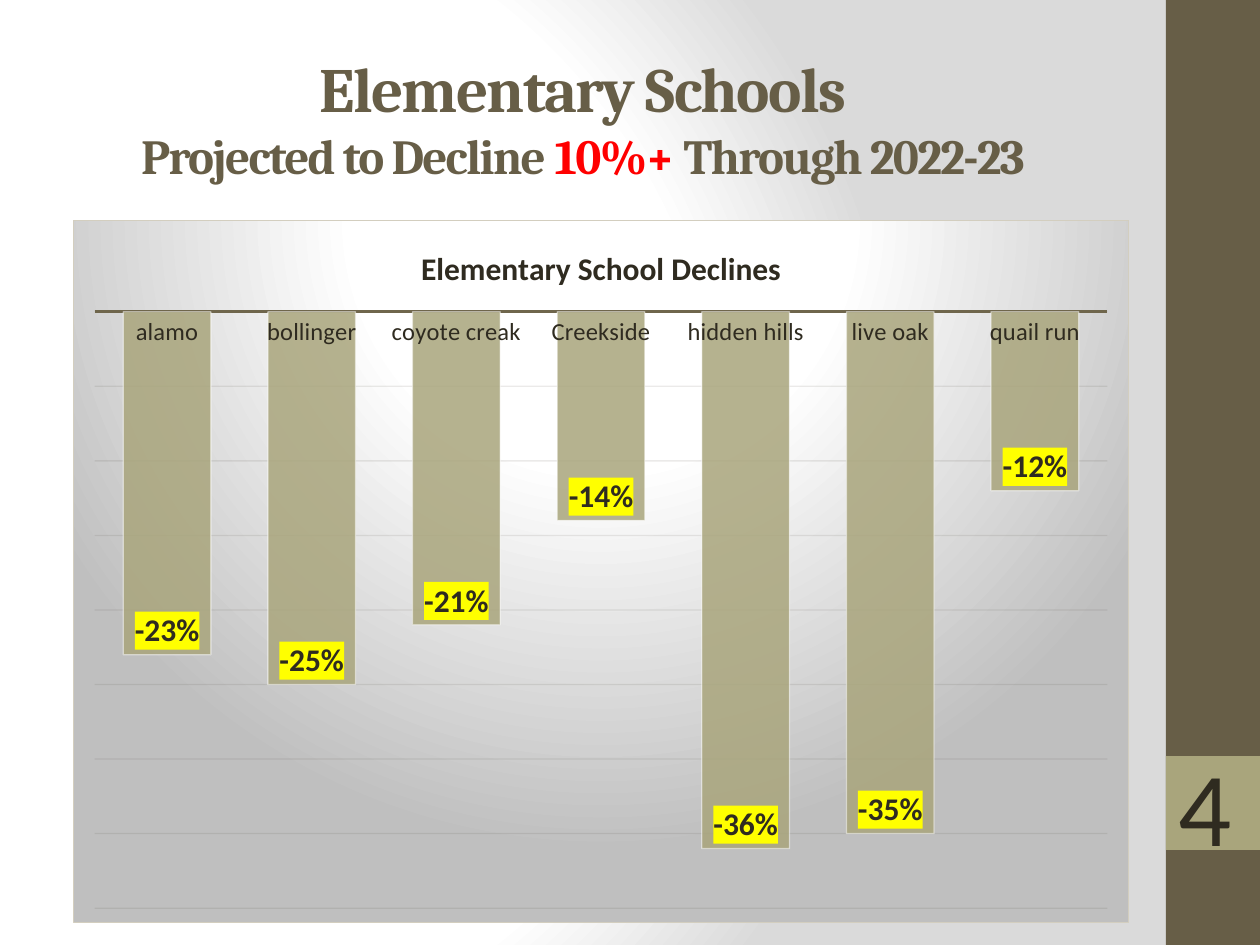
"""Builds the slide on elementary schools whose enrollment is projected to decline."""
from lxml import etree
from pptx import Presentation
from pptx import util as u
from pptx.chart import data
from pptx.dml.color import RGBColor
from pptx.enum import chart as ch, shapes, text
from pptx.oxml import parse_xml
from pptx.oxml.ns import qn

A = "http://schemas.openxmlformats.org/drawingml/2006/main"
C = "http://schemas.openxmlformats.org/drawingml/2006/chart"
PX = 914400 / 126
COLORS = {"brown": "675E47", "sage": "A9A57C", "ink": "2F2B20", "red": "FF0000",
          "yellow": "FFFF00", "white": "FFFFFF", "axis": "6F664C", "grid": "3C3729",
          "border": "D3CEBF"}
HEADING = [("Elementary Schools", 36, "brown"), None,
           ("Projected to Decline ", 28, "brown"), ("10%+ ", 28, "red"),
           ("Through 2022-23", 28, "brown")]
CHART_TITLE = "Elementary School Declines"
DECLINES = {"alamo": -0.23, "bollinger": -0.25, "coyote creak": -0.21, "Creekside": -0.14,
            "hidden hills": -0.36, "live oak": -0.35, "quail run": -0.12}
SIDEBAR = [((1166, 0, 94, 945), "brown"), ((1166, 756, 94, 94), "sage")]
PAGE_NUMBER = "4"
BACKDROP = ([(0, "FFFFFF"), (75, "FFFFFF"), (100, "DADADA")], (20, 50, 100, 50))
CHART_GLOW = ([(0, "FFFFFF"), (39, "FFFFFF"), (100, "BFBFBF")], (50, -80, 50, 180))
PLOT = {"x": 0.02, "y": 0.13, "w": 0.96, "h": 0.85}


def rgb(name):
    return RGBColor.from_string(COLORS[name])


def box(*px):
    return [u.Emu(round(v * PX)) for v in px]


def style(font, size, color="ink", bold=False, name="Calibri"):
    font.size, font.bold, font.name = u.Pt(size), bold, name
    font.color.rgb = rgb(color)


def stroke(line, color, points):
    line.color.rgb = rgb(color)
    line.width = u.Pt(points)


def glow(stops, center):
    colors = "".join(f'<a:gs pos="{at * 1000}"><a:srgbClr val="{c}"/></a:gs>' for at, c in stops)
    rect = " ".join(f'{side}="{v * 1000}"' for side, v in zip("ltrb", center))
    return (f'<a:gradFill xmlns:a="{A}" rotWithShape="1"><a:gsLst>{colors}</a:gsLst>'
            f'<a:path path="circle"><a:fillToRect {rect}/></a:path></a:gradFill>')


def fade(root, where, percent):
    for color in root.xpath(where + "/a:solidFill/a:srgbClr"):
        etree.SubElement(color, qn("a:alpha")).set("val", str(percent * 1000))


def add_heading(slide):
    title = slide.shapes.title
    title.left, title.top, title.width, title.height = box(21, 38, 1124, 158)
    frame = title.text_frame
    frame.auto_size = text.MSO_AUTO_SIZE.NONE
    frame.vertical_anchor = text.MSO_ANCHOR.MIDDLE
    line = frame.paragraphs[0]
    line.alignment = text.PP_ALIGN.CENTER
    for part in HEADING:
        if part is None:
            line.add_line_break()
            continue
        words, size, color = part
        run = line.add_run()
        run.text = words
        style(run.font, size, color, True, "Cambria")
        run.font._element.set("spc", "-100")


def add_declines(slide):
    source = data.CategoryChartData(number_format="0%")
    source.categories = list(DECLINES)
    source.add_series("Series 1", list(DECLINES.values()))
    chart = slide.shapes.add_chart(ch.XL_CHART_TYPE.COLUMN_CLUSTERED,
                                   *box(73, 220, 1056, 703), source).chart
    style(chart.font, 10)
    chart.has_legend = False
    chart.has_title = True
    chart.chart_title.text_frame.text = CHART_TITLE
    style(chart.chart_title.text_frame.paragraphs[0].font, 18, bold=True)

    schools, percent = chart.category_axis, chart.value_axis
    schools.major_tick_mark = ch.XL_TICK_MARK.NONE
    style(schools.tick_labels.font, 14)
    stroke(schools.format.line, "axis", 1.5)
    percent.minimum_scale, percent.maximum_scale, percent.major_unit = -0.4, 0, 0.05
    percent.visible = False
    stroke(percent.major_gridlines.format.line, "grid", 0.75)

    plot = chart.plots[0]
    plot.gap_width = 65
    plot.vary_by_categories = False
    bars = plot.series[0]
    bars.invert_if_negative = False
    bars.format.fill.solid()
    bars.format.fill.fore_color.rgb = rgb("sage")
    stroke(bars.format.line, "white", 0.75)
    labels = bars.data_labels
    labels.show_value = True
    labels.position = ch.XL_LABEL_POSITION.INSIDE_END
    labels.number_format, labels.number_format_is_linked = "0%", False
    style(labels.font, 18, bold=True)

    root = chart.element
    fade(root, ".//c:ser/c:spPr", 85)
    fade(root, ".//c:ser/c:spPr/a:ln", 50)
    fade(root, ".//c:majorGridlines/c:spPr/a:ln", 10)
    root.xpath(".//c:ser/c:dLbls/c:txPr")[0].addprevious(parse_xml(
        f'<c:spPr xmlns:c="{C}" xmlns:a="{A}"><a:solidFill>'
        f'<a:srgbClr val="{COLORS["yellow"]}"/></a:solidFill></c:spPr>'))
    root.xpath("c:chart")[0].addnext(parse_xml(
        f'<c:spPr xmlns:c="{C}" xmlns:a="{A}">{glow(*CHART_GLOW)}<a:ln w="9525"><a:solidFill>'
        f'<a:srgbClr val="{COLORS["border"]}"/></a:solidFill></a:ln></c:spPr>'))
    area = root.xpath("c:chart/c:plotArea")[0]
    for old in area.xpath("c:layout"):
        area.remove(old)
    sizes = "".join(f'<c:{key} val="{value}"/>' for key, value in PLOT.items())
    area.insert(0, parse_xml(
        f'<c:layout xmlns:c="{C}"><c:manualLayout><c:layoutTarget val="inner"/>'
        f'<c:xMode val="edge"/><c:yMode val="edge"/>{sizes}</c:manualLayout></c:layout>'))


def main():
    deck = Presentation()
    deck.slide_width, deck.slide_height = u.Inches(10), u.Inches(7.5)
    slide = deck.slides.add_slide(deck.slide_layouts[5])
    slide.background.fill.solid()
    plain = slide.element.xpath(".//p:bgPr/a:solidFill")[0]
    plain.getparent().replace(plain, parse_xml(glow(*BACKDROP)))

    for place, color in SIDEBAR:
        band = slide.shapes.add_shape(shapes.MSO_SHAPE.RECTANGLE, *box(*place))
        band.shadow.inherit = False
        band.fill.solid()
        band.fill.fore_color.rgb = rgb(color)
        band.line.fill.background()
    add_heading(slide)
    add_declines(slide)
    number = slide.shapes.add_textbox(*box(1166, 735, 73, 140)).text_frame
    number.word_wrap = True
    number.auto_size = text.MSO_AUTO_SIZE.SHAPE_TO_FIT_TEXT
    number.text = PAGE_NUMBER
    style(number.paragraphs[0].font, 60)
    deck.save("out.pptx")


if __name__ == "__main__":
    main()
